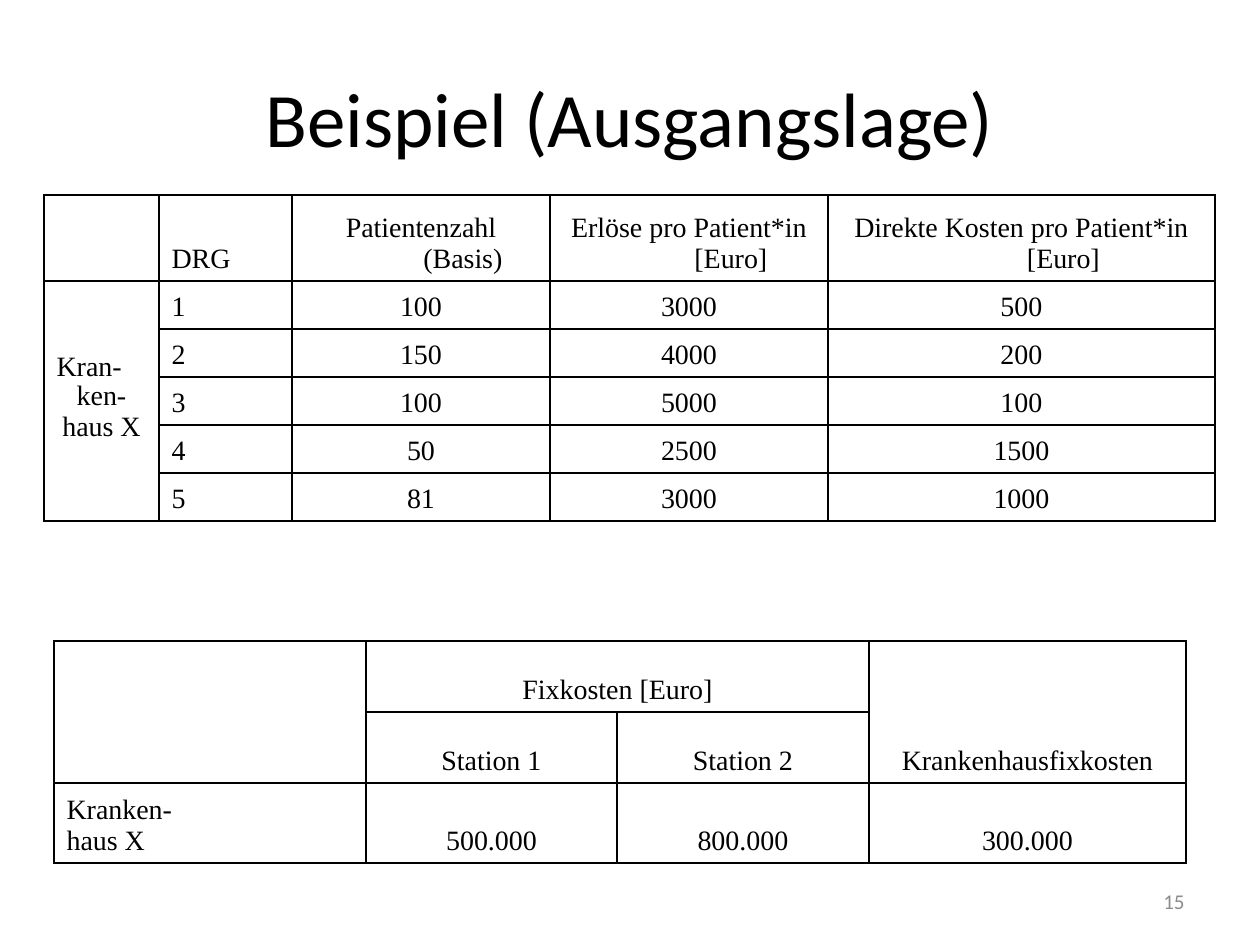
from dataclasses import dataclass, field

import lxml.etree
import pptx
import pptx.dml.color
import pptx.enum.text
import pptx.oxml.ns
import pptx.util

PX_PER_INCH = 126
BLACK = pptx.dml.color.RGBColor(0x00, 0x00, 0x00)
WHITE = pptx.dml.color.RGBColor(0xFF, 0xFF, 0xFF)
GREY = pptx.dml.color.RGBColor(0x8C, 0x8C, 0x8C)
ALIGN = pptx.enum.text.PP_ALIGN
ANCHOR = pptx.enum.text.MSO_ANCHOR
HANGING = 84


@dataclass
class Label:
    text: str
    left: int
    top: int
    width: int
    height: int
    size: int
    color: pptx.dml.color.RGBColor
    align: ALIGN


@dataclass
class Grid:
    left: int
    top: int
    columns: list[int]
    rows: list[int]
    cells: list[list[str]]
    # Each merge holds first row, first column, last row, last column
    merges: list[tuple[int, int, int, int]]
    # Cells whose first line is left-aligned
    left_cells: set[tuple[int, int]] = field(default_factory=set)


def px(length: int) -> pptx.util.Emu:
    return pptx.util.Emu(round(length * 914400 / PX_PER_INCH))


def add_run(paragraph, text: str, font: str, size: int, color) -> None:
    run = paragraph.add_run()
    run.text = text
    run.font.name = font
    run.font.size = pptx.util.Pt(size)
    run.font.color.rgb = color


def draw_label(slide, label: Label) -> None:
    box = slide.shapes.add_textbox(
        px(label.left), px(label.top), px(label.width), px(label.height))
    frame = box.text_frame
    frame.word_wrap = True
    frame.vertical_anchor = ANCHOR.MIDDLE
    paragraph = frame.paragraphs[0]
    paragraph.alignment = label.align
    add_run(paragraph, label.text, "Calibri", label.size, label.color)


def style_cell(cell) -> None:
    properties = cell._tc.get_or_add_tcPr()
    qn = pptx.oxml.ns.qn
    for side in ("a:lnL", "a:lnR", "a:lnT", "a:lnB"):
        line = lxml.etree.SubElement(properties, qn(side), w=str(pptx.util.Pt(1)))
        fill = lxml.etree.SubElement(line, qn("a:solidFill"))
        lxml.etree.SubElement(fill, qn("a:srgbClr"), val=str(BLACK))
    cell.fill.solid()
    cell.fill.fore_color.rgb = WHITE
    cell.vertical_anchor = ANCHOR.BOTTOM


def write_cell(cell, text: str, align: ALIGN) -> None:
    frame = cell.text_frame
    for index, line in enumerate(text.split("\n")):
        paragraph = frame.add_paragraph() if index else frame.paragraphs[0]
        paragraph.alignment = align
        indent = paragraph._p.get_or_add_pPr()
        indent.set("marL", str(px(HANGING)))
        indent.set("indent", str(-px(HANGING)))
        add_run(paragraph, line, "Times New Roman", 16, BLACK)


def draw_grid(slide, grid: Grid):
    table = slide.shapes.add_table(
        len(grid.rows), len(grid.columns), px(grid.left), px(grid.top),
        px(sum(grid.columns)), px(sum(grid.rows))).table
    table.first_row = False
    table.horz_banding = False
    for column, width in zip(table.columns, grid.columns):
        column.width = px(width)
    for row, height in zip(table.rows, grid.rows):
        row.height = px(height)
    for r, texts in enumerate(grid.cells):
        for c, text in enumerate(texts):
            cell = table.cell(r, c)
            style_cell(cell)
            if text:
                align = ALIGN.LEFT if (r, c) in grid.left_cells else ALIGN.CENTER
                write_cell(cell, text, align)
    for r1, c1, r2, c2 in grid.merges:
        table.cell(r1, c1).merge(table.cell(r2, c2))
    return table


TITLE = Label("Beispiel (Ausgangslage)", 63, 38, 1134, 157, 44, BLACK, ALIGN.CENTER)
PAGE_NUMBER = Label("15", 903, 876, 294, 50, 12, GREY, ALIGN.RIGHT)

DRG_GRID = Grid(
    44, 195, [115, 133, 258, 278, 387], [86] + [48] * 5,
    [
        ["", "DRG", "Patientenzahl (Basis)", "Erlöse pro Patient*in [Euro]",
         "Direkte Kosten pro Patient*in [Euro]"],
        ["Kran-\nken-\nhaus X", "1", "100", "3000", "500"],
        ["", "2", "150", "4000", "200"],
        ["", "3", "100", "5000", "100"],
        ["", "4", "50", "2500", "1500"],
        ["", "5", "81", "3000", "1000"],
    ],
    merges=[(1, 0, 5, 0)],
    left_cells={(row, 1) for row in range(6)},
)

FIXED_COST_GRID = Grid(
    54, 641, [312, 251, 252, 317], [71, 71, 80],
    [
        ["", "Fixkosten [Euro]", "", "Krankenhausfixkosten"],
        ["", "Station 1", "Station 2", ""],
        ["Kranken-\nhaus X", "500.000", "800.000", "300.000"],
    ],
    merges=[(0, 0, 1, 0), (0, 1, 0, 2), (0, 3, 1, 3)],
    left_cells={(2, 0)},
)


def main() -> None:
    presentation = pptx.Presentation()
    presentation.slide_width = px(1260)
    presentation.slide_height = px(945)
    slide = presentation.slides.add_slide(presentation.slide_layouts[6])

    # Title
    draw_label(slide, TITLE)

    # Revenue and direct costs per DRG
    drg_table = draw_grid(slide, DRG_GRID)
    hospital = drg_table.cell(1, 0)
    hospital.vertical_anchor = ANCHOR.MIDDLE
    first_line = hospital.text_frame.paragraphs[0]
    first_line.alignment = ALIGN.LEFT
    first_line.line_spacing = 0.7

    # Fixed costs per ward and hospital
    draw_grid(slide, FIXED_COST_GRID)

    # Page number
    draw_label(slide, PAGE_NUMBER)

    presentation.save("out.pptx")


if __name__ == "__main__":
    main()
